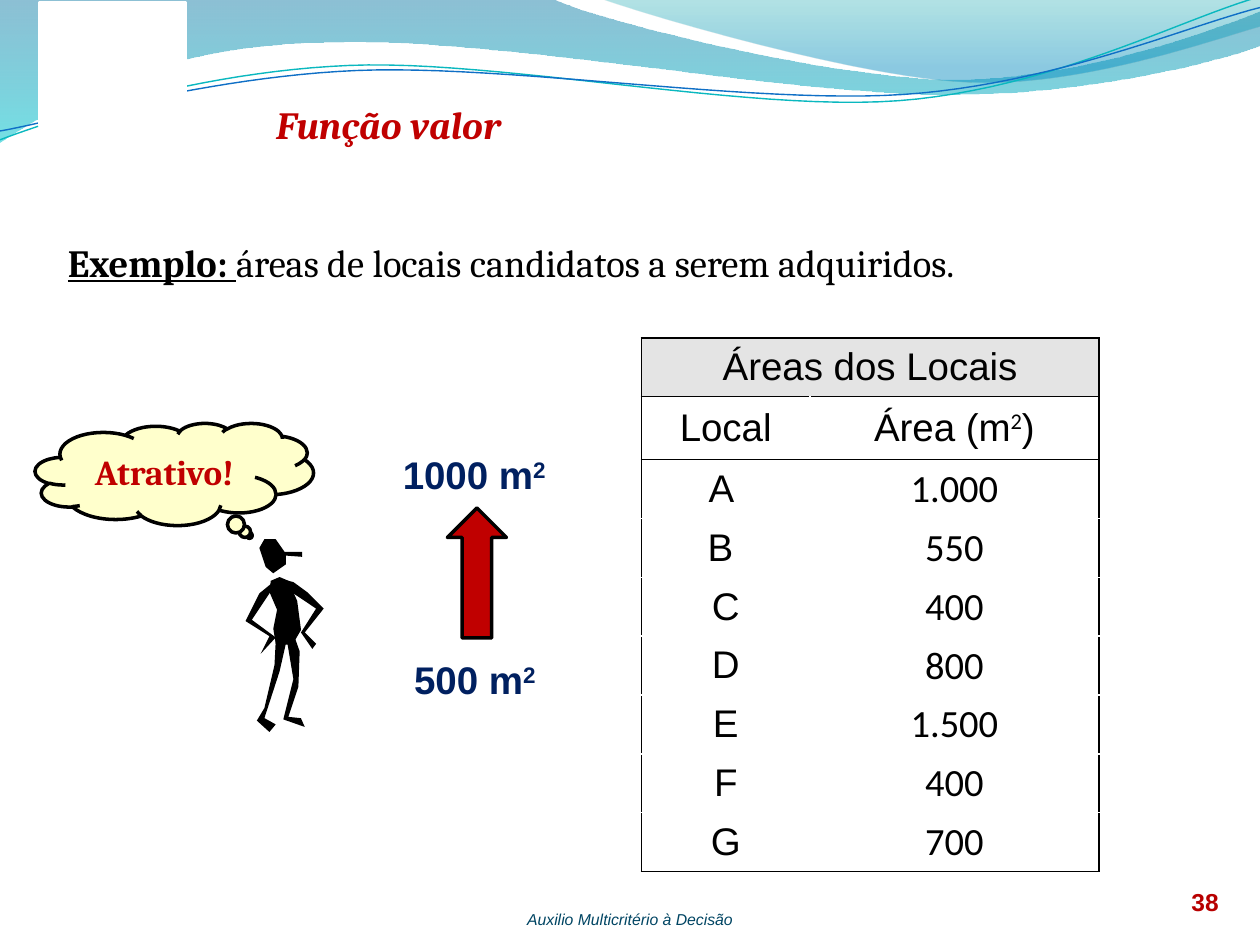
import pptx
import pptx.dml.color
import pptx.enum.shapes
import pptx.enum.text
import pptx.oxml
import pptx.oxml.ns
import pptx.util
from lxml import etree

Cm = pptx.util.Cm
Pt = pptx.util.Pt
Align = pptx.enum.text.PP_ALIGN
Anchor = pptx.enum.text.MSO_ANCHOR
Preset = pptx.enum.shapes.MSO_SHAPE

UNIT = 0.0254  # grid step of the freeform outlines, in cm
BLACK, RED, NAVY = "000000", "C00000", "002060"

# Two numbers are a point; six are a Bézier curve (two controls and an end).
WAVE_BACK = [(0, 0), (440, 0), (476, 17, 664, 63, 758, 63), (853, 63, 958, 26, 1000, 9),
             (1000, 36), (983, 44, 870, 76, 746, 75), (622, 75, 382, 28, 257, 34),
             (129, 35, 46, 83, 0, 113)]
WAVE_FRONT = [(479, 0), (509, 11, 682, 62, 769, 65), (856, 69, 961, 32, 1000, 21), (1000, 0)]
LINE_TEAL = [(0, 111), (48, 93, 158, 57, 277, 52), (395, 47, 593, 89, 713, 80),
             (833, 71, 938, 15, 998, -2)]
LINE_BLUE = [(0, 104), (47, 96, 164, 61, 283, 56), (403, 51, 597, 83, 717, 75),
             (836, 67, 941, 21, 1000, 6)]

FIGURE = {
    "head": [(31, 12), (24, 2), (15, 2), (11, 9), (16, 24), (22, 29), (32, 22), (32, 15),
             (45, 16), (45, 12)],
    "torso": [(20, 35), (27, 32), (34, 35), (41, 51), (44, 74), (37, 86), (24, 85), (22, 73),
              (25, 58), (19, 44)],
    "right arm": [(38, 36), (30, 34), (35, 43), (56, 57), (44, 76), (53, 89), (56, 85),
                  (47, 76), (62, 57), (49, 44)],
    "left arm": [(22, 36), (11, 45), (0, 67), (19, 79), (12, 93), (24, 80), (5, 66), (25, 36)],
    "left leg": [(30, 79), (24, 83), (23, 102), (15, 136), (9, 146), (19, 155), (24, 149),
                 (15, 144), (27, 107), (32, 85)],
    "right leg": [(43, 91), (38, 77), (33, 83), (38, 113), (30, 145), (47, 151), (44, 144),
                  (34, 143), (42, 119)],
}
AREAS = [("A ", "1.000"), ("B ", "550"), ("C", "400"), ("D", "800"),
         ("E", "1.500"), ("F", "400"), ("G", "700")]


def rgb(value):
    return pptx.dml.color.RGBColor.from_string(value)


def write(paragraph, text, font="Arial", size=22, color=BLACK, bold=False, italic=False,
          underline=False, superscript=False):
    run = paragraph.add_run()
    run.text = text
    run.font.name, run.font.size = font, Pt(size)
    run.font.bold, run.font.italic, run.font.underline = bold, italic, underline
    run.font.color.rgb = rgb(color)
    if superscript:
        run.font._element.set("baseline", "30000")


def add_text_box(slide, box, align=Align.LEFT, margin=None):
    """Add an empty text box and return its first paragraph."""
    frame = slide.shapes.add_textbox(*map(Cm, box)).text_frame
    frame.word_wrap = True
    if margin is not None:
        frame.margin_left = frame.margin_top = frame.margin_right = frame.margin_bottom = margin
    frame.paragraphs[0].alignment = align
    return frame.paragraphs[0]


def paint(shape, fill=None, line=None, width=2):
    shape.shadow.inherit = False
    if fill:
        shape.fill.solid()
        shape.fill.fore_color.rgb = rgb(fill)
    else:
        shape.fill.background()
    if line:
        shape.line.color.rgb = rgb(line)
        shape.line.width = Pt(width)
    else:
        shape.line.fill.background()


def flatten(outline, steps=24):
    """Turn an outline with Bézier curves into plain points."""
    points = []
    for part in outline:
        if len(part) == 2:
            points.append(part)
            continue
        corners = [points[-1], part[:2], part[2:4], part[4:]]
        for step in range(1, steps + 1):
            t = step / steps
            weights = ((1 - t) ** 3, 3 * t * (1 - t) ** 2, 3 * t * t * (1 - t), t ** 3)
            points.append(tuple(sum(weight * corner[axis] for weight, corner in zip(weights, corners))
                                for axis in (0, 1)))
    return points


def add_outline(shapes, left, top, outline, close=True):
    points = [(Cm(left + x * UNIT), Cm(top + y * UNIT)) for x, y in flatten(outline)]
    builder = shapes.build_freeform(*points[0])
    builder.add_line_segments(points[1:], close=close)
    return builder.convert_to_shape()


def fade(shape, stops):
    """Fill from top to bottom with (position, colour, opacity percent) stops."""
    shape.fill.gradient()
    shape.fill.gradient_angle = 270
    for stop, (position, color, _) in zip(shape.fill.gradient_stops, stops):
        stop.position = position
        stop.color.rgb = rgb(color)
    colors = shape._element.spPr.iter(pptx.oxml.ns.qn("a:srgbClr"))
    for element, (_, _, opacity) in zip(colors, stops):
        etree.SubElement(element, pptx.oxml.ns.qn("a:alpha")).set("val", str(opacity * 1000))


def add_banner(slide, left, top):
    for outline, stops in ((WAVE_BACK, [(0, "0074A1", 45), (1, "00C6CF", 55)]),
                           (WAVE_FRONT, [(0, "00A1A9", 30), (0.8, "008BBF", 45)])):
        wave = add_outline(slide.shapes, left, top, outline)
        paint(wave)
        fade(wave, stops)
    for outline, color in ((LINE_TEAL, "0AB8BF"), (LINE_BLUE, "0F6FC6")):
        paint(add_outline(slide.shapes, left, top, outline, close=False), line=color, width=0.8)
    panel = slide.shapes.add_shape(Preset.RECTANGLE, Cm(left + 0.81), Cm(top + 0.05), Cm(2.92), Cm(2.49))
    paint(panel, "FFFFFF", "FFFFFF")


def add_footer(slide, left, top, width):
    caption = add_text_box(slide, (left, top + 0.84, width, 0.38), Align.CENTER, margin=0)
    write(caption, "Auxilio Multicritério à Decisão", size=9, color="004563", italic=True)
    number = add_text_box(slide, (left + width - 2.16, top, 2.11, 1.02), Align.CENTER)
    number.line_spacing = Pt(24)
    write(number, "38", size=14, color="B80000", bold=True)


def set_title(slide, left, top, width, height):
    title = slide.shapes.title
    title.left, title.top, title.width, title.height = map(Cm, (left, top, width, height))
    title.text_frame.vertical_anchor = Anchor.TOP
    paragraph = title.text_frame.paragraphs[0]
    paragraph.alignment = Align.LEFT
    write(paragraph, "Função valor", "Cambria", color=RED, bold=True, italic=True)


def add_example(slide, box):
    paragraph = add_text_box(slide, box, Align.JUSTIFY)
    paragraph.line_spacing = Pt(24)
    properties = paragraph._element.get_or_add_pPr()
    properties.set("marL", str(Cm(1)))
    properties.set("indent", str(Cm(-1)))
    write(paragraph, "Exemplo: ", "Cambria", bold=True, underline=True)
    write(paragraph, "áreas de locais candidatos a serem adquiridos. ", "Cambria")


def add_thinker(slide, left, top):
    """Draw the standing figure with its thought cloud."""
    figure = slide.shapes.add_group_shape()
    for outline in FIGURE.values():
        paint(add_outline(figure.shapes, left + 4.24, top + 2.29, outline), BLACK)
    cloud = slide.shapes.add_shape(Preset.CLOUD_CALLOUT, Cm(left), Cm(top), Cm(5.61), Cm(2.06))
    cloud.adjustments[0], cloud.adjustments[1] = 0.27, 0.6
    paint(cloud, "FFFFCC", BLACK)
    cloud.text_frame.vertical_anchor = Anchor.MIDDLE
    paragraph = cloud.text_frame.paragraphs[0]
    paragraph.alignment = Align.CENTER
    write(paragraph, "Atrativo!", "Cambria", 20, RED, bold=True)


def add_scale(slide, left, top):
    """Place the upward arrow between the two areas it compares."""
    for x, y, width, text in ((0, 0, 3.53, "1000 m"), (0.23, 4.14, 3.15, "500 m")):
        label = add_text_box(slide, (left + x, top + y, width, 1.19))
        write(label, text, color=NAVY, bold=True)
        write(label, "2", color=NAVY, bold=True, superscript=True)
    arrow = slide.shapes.add_shape(Preset.UP_ARROW, Cm(left + 1.15), Cm(top + 1.27), Cm(1.19), Cm(2.62))
    paint(arrow, RED, BLACK)


def set_borders(cell, sides):
    properties = cell._tc.get_or_add_tcPr()
    for index, side in enumerate(side for side in "LRTB" if side in sides):
        properties.insert(index, pptx.oxml.parse_xml(
            f'<a:ln{side} {pptx.oxml.ns.nsdecls("a")} w="12700"><a:solidFill>'
            f'<a:srgbClr val="{BLACK}"/></a:solidFill></a:ln{side}>'))


def add_area_table(slide, left, top):
    widths, heights = (3.4, 5.82), [1.17, 1.27] + [1.18] * len(AREAS)
    table = slide.shapes.add_table(len(heights), 2, Cm(left), Cm(top),
                                   Cm(sum(widths)), Cm(sum(heights))).table
    table.first_row = table.horz_banding = False
    for column, width in zip(table.columns, widths):
        column.width = Cm(width)
    for row, height in zip(table.rows, heights):
        row.height = Cm(height)
    table.cell(0, 0).merge(table.cell(0, 1))
    rows = [("Áreas dos Locais", ""), ("Local", "Área (m")] + AREAS
    for row, texts in enumerate(rows):
        for column, text in enumerate(texts):
            cell = table.cell(row, column)
            cell.vertical_anchor = Anchor.MIDDLE
            if row == 0:
                cell.fill.solid()
                cell.fill.fore_color.rgb = rgb("E4E4E4")
            else:
                cell.fill.background()
            sides = "LR" if row == 0 else "LR"[column]
            sides += "T" if row <= 2 else ""
            set_borders(cell, sides + ("B" if row in (0, 1, len(rows) - 1) else ""))
            paragraph = cell.text_frame.paragraphs[0]
            paragraph.alignment = Align.CENTER
            if text:
                write(paragraph, text, "Calibri" if row > 1 and column else "Arial")
    area_heading = table.cell(1, 1).text_frame.paragraphs[0]
    write(area_heading, "2", "Calibri", superscript=True)
    write(area_heading, ")")


def main():
    presentation = pptx.Presentation()
    presentation.slide_width, presentation.slide_height = Cm(25.4), Cm(19.05)
    slide = presentation.slides.add_slide(presentation.slide_layouts[5])
    add_banner(slide, 0, 0)
    add_footer(slide, 0, 17.5, 25.4)
    set_title(slide, 5.31, 1.91, 20.09, 1.98)
    add_example(slide, (1.12, 4.78, 22.28, 1.12))
    add_area_table(slide, 12.93, 6.81)
    add_scale(slide, 7.87, 8.97)
    add_thinker(slide, 0.71, 8.53)
    presentation.save("out.pptx")


if __name__ == "__main__":
    main()
